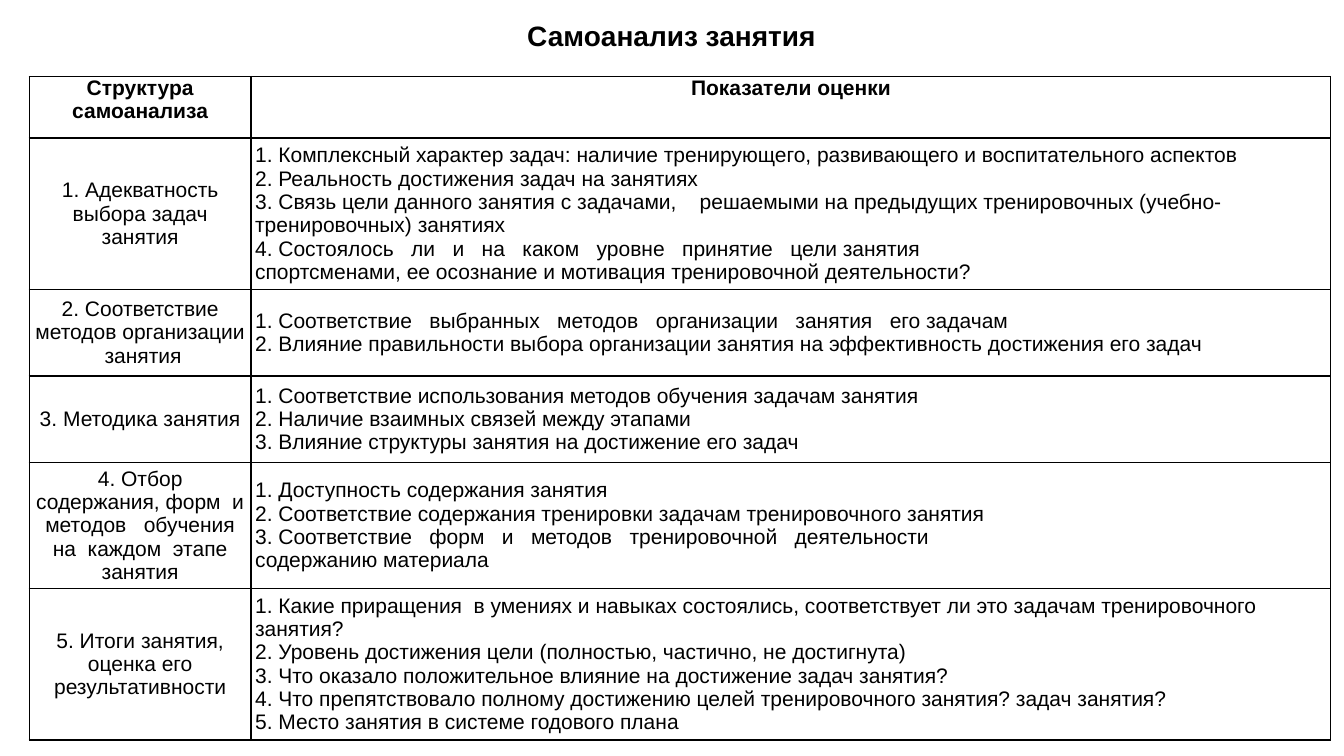
from lxml import etree
from pptx import Presentation, util as u
from pptx.dml.color import RGBColor
from pptx.enum import text
from pptx.oxml import ns

BLACK = "000000"
TITLE = "Самоанализ занятия"
HEADER = (["Структура самоанализа"], ["Показатели оценки"])
CRITERIA = [
    (["1. Адекватность выбора задач занятия"],
     ["1. Комплексный характер задач: наличие тренирующего, развивающего и воспитательного аспектов",
      "2. Реальность достижения задач на занятиях",
      "3. Связь цели данного занятия с задачами,    решаемыми на предыдущих тренировочных (учебно-тренировочных) занятиях",
      "4. Состоялось   ли   и   на   каком   уровне   принятие   цели занятия",
      "спортсменами, ее осознание и мотивация тренировочной деятельности?"]),
    (["2. Соответствие", "методов организации  занятия"],
     ["1. Соответствие   выбранных   методов   организации   занятия   его задачам",
      "2. Влияние правильности выбора организации занятия на эффективность достижения его задач"]),
    (["3. Методика занятия"],
     ["1. Соответствие использования методов обучения задачам занятия",
      "2. Наличие взаимных связей между этапами",
      "3. Влияние структуры занятия на достижение его задач"]),
    (["4. Отбор содержания, форм  и  методов   обучения  на  каждом  этапе занятия"],
     ["1. Доступность содержания занятия",
      "2. Соответствие содержания тренировки задачам тренировочного занятия",
      "3. Соответствие   форм   и   методов   тренировочной   деятельности",
      "содержанию материала"]),
    (["5. Итоги занятия, оценка его результативности"],
     ["1. Какие приращения  в умениях и навыках состоялись, соответствует ли это задачам тренировочного занятия?",
      "2. Уровень достижения цели (полностью, частично, не достигнута)",
      "3. Что оказало положительное влияние на достижение задач занятия?",
      "4. Что препятствовало полному достижению целей тренировочного занятия? задач занятия?",
      "5. Место занятия в системе годового плана"]),
]
COLUMN_WIDTHS = [2.2, 10.71]
ROW_HEIGHTS = [0.61, 1.43, 0.86, 0.86, 1.1, 1.37]
HANGING_ROW = 2


def format_paragraph(para, size, bold, centred):
    para.alignment = text.PP_ALIGN.CENTER if centred else text.PP_ALIGN.LEFT
    para.font.name = "Arial"
    para.font.size = u.Pt(size)
    para.font.bold = bold
    para.font.color.rgb = RGBColor.from_string(BLACK)


def add_borders(cell):
    properties = cell._tc.get_or_add_tcPr()
    for side in ("lnL", "lnR", "lnT", "lnB"):
        line = etree.SubElement(properties, ns.qn(f"a:{side}"), w=str(u.Pt(1)))
        fill = etree.SubElement(line, ns.qn("a:solidFill"))
        etree.SubElement(fill, ns.qn("a:srgbClr"), val=BLACK)


deck = Presentation()
deck.slide_width, deck.slide_height = u.Inches(13.33), u.Inches(7.5)
page = deck.slides.add_slide(deck.slide_layouts.get_by_name("Title Only"))

title = page.shapes.title
title.left, title.top = u.Inches(1.74), u.Inches(0.13)
title.width, title.height = u.Inches(9.84), u.Inches(0.44)
title.text_frame.text = TITLE
title.text_frame.auto_size = text.MSO_AUTO_SIZE.SHAPE_TO_FIT_TEXT
format_paragraph(title.text_frame.paragraphs[0], 20, True, True)

rows = [HEADER] + CRITERIA
table = page.shapes.add_table(
    len(rows), len(COLUMN_WIDTHS), u.Inches(0.29), u.Inches(0.76),
    u.Inches(sum(COLUMN_WIDTHS)), u.Inches(sum(ROW_HEIGHTS))).table
table.first_row = table.horz_banding = False
for column, width in zip(table.columns, COLUMN_WIDTHS):
    column.width = u.Inches(width)
for row, height in zip(table.rows, ROW_HEIGHTS):
    row.height = u.Inches(height)

for r, row in enumerate(rows):
    is_header = r == 0
    for c, lines in enumerate(row):
        cell = table.cell(r, c)
        cell.text = "\n".join(lines)
        cell.margin_left = cell.margin_right = u.Inches(0.04)
        cell.margin_top = cell.margin_bottom = 0
        cell.vertical_anchor = text.MSO_ANCHOR.TOP if is_header else text.MSO_ANCHOR.MIDDLE
        add_borders(cell)
        cell.fill.background()
        for para in cell.text_frame.paragraphs:
            format_paragraph(para, 15, is_header, is_header or c == 0)
            if r == HANGING_ROW and c == 1:
                indent = u.Inches(0.25)
                properties = para._p.get_or_add_pPr()
                properties.set("marL", str(indent))
                properties.set("indent", str(-indent))

deck.save("out.pptx")
